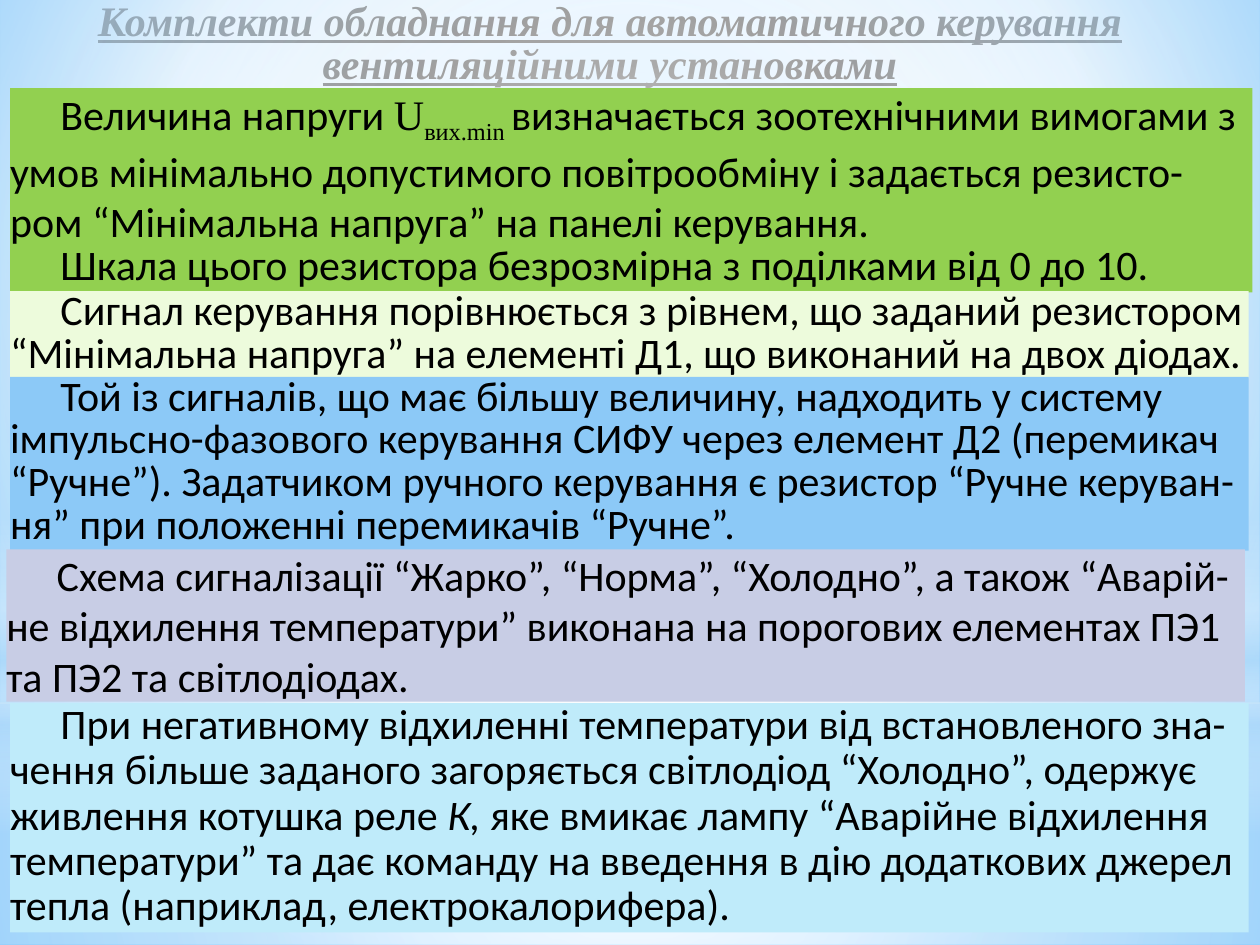
from lxml import etree
from pptx import Presentation, util as u
from pptx.dml.color import RGBColor
from pptx.enum import shapes, text
from pptx.oxml.ns import qn

BLACK = RGBColor(0x00, 0x00, 0x00)
WHITE = RGBColor(0xFF, 0xFF, 0xFF)
SKY = RGBColor(0x9E, 0xD5, 0xFF)
DEEP_SKY = RGBColor(0x5B, 0xB9, 0xFF)
HAZE = RGBColor(0xB4, 0xDC, 0xFA)
GREEN = RGBColor(0x92, 0xD0, 0x50)
PALE_GREEN = RGBColor(0xED, 0xFB, 0xDC)
BLUE = RGBColor(0x8C, 0xC9, 0xF7)
LAVENDER = RGBColor(0xC8, 0xCD, 0xE5)
PALE_CYAN = RGBColor(0xBF, 0xEB, 0xFA)

WIDTH, HEIGHT = 720, 540
HORIZON = 401.76
SERIF = {"name": "Times New Roman"}
CENTRE = (50, 50, 50, 50)


class SlideBuilder:
    font = "Calibri"
    size = 24
    indent = 28.8

    def __init__(self, slide):
        self.slide = slide

    def gradient(self, owner, fill, stops, focus=None):
        """Fill with (position, colour, opacity) stops: circular round focus, else downward."""
        fill.solid()
        solid = next(owner.iter(qn("a:solidFill")))
        grad = etree.Element(qn("a:gradFill"), rotWithShape="1")
        stop_list = etree.SubElement(grad, qn("a:gsLst"))
        for position, colour, opacity in stops:
            stop = etree.SubElement(stop_list, qn("a:gs"), pos=str(position * 1000))
            tint = etree.SubElement(stop, qn("a:srgbClr"), val=str(colour))
            if opacity < 100:
                etree.SubElement(tint, qn("a:alpha"), val=str(opacity * 1000))
        if focus:
            circle = etree.SubElement(grad, qn("a:path"), path="circle")
            edges = {side: str(share * 1000) for side, share in zip("ltrb", focus)}
            etree.SubElement(circle, qn("a:fillToRect"), **edges)
        else:
            etree.SubElement(grad, qn("a:lin"), ang="5400000", scaled="0")
        solid.getparent().replace(solid, grad)

    def background(self, stops, focus):
        fill = self.slide.background.fill
        self.gradient(self.slide.element, fill, stops, focus)

    def shape(self, kind, left, top, width, height):
        shape = self.slide.shapes.add_shape(
            kind, u.Pt(left), u.Pt(top), u.Pt(width), u.Pt(height))
        shape.shadow.inherit = False
        shape.line.fill.background()
        return shape

    def glow(self, kind, top, height, stops, focus=None):
        shape = self.shape(kind, 0, top, WIDTH, height)
        self.gradient(shape._element.spPr, shape.fill, stops, focus)

    def frame(self, shape):
        frame = shape.text_frame
        frame.word_wrap = True
        frame.auto_size = text.MSO_AUTO_SIZE.SHAPE_TO_FIT_TEXT
        frame.vertical_anchor = text.MSO_ANCHOR.TOP
        frame.margin_left = frame.margin_top = frame.margin_right = frame.margin_bottom = 0
        return frame

    def run(self, paragraph, words, baseline=None, **style):
        run = paragraph.add_run()
        run.text = words
        run.font.size = u.Pt(self.size)
        run.font.color.rgb = BLACK
        for key, value in {"name": self.font, **style}.items():
            setattr(run.font, key, value)
        if baseline:
            run.font._element.set("baseline", str(baseline * 1000))

    def title(self, left, top, width, height, words):
        title = self.slide.shapes.title
        title.left, title.top = u.Pt(left), u.Pt(top)
        title.width, title.height = u.Pt(width), u.Pt(height)
        paragraph = self.frame(title).paragraphs[0]
        paragraph.alignment = text.PP_ALIGN.CENTER
        paragraph.line_spacing = 0.85
        paragraph.space_before = u.Pt(0)
        self.run(paragraph, words, bold=True, italic=True, underline=True, **SERIF)

    def panel(self, left, top, width, height, colour, paragraphs):
        """Coloured block; each paragraph is (line spacing, [(words, style), ...])."""
        panel = self.shape(shapes.MSO_SHAPE.RECTANGLE, left, top, width, height)
        panel.fill.solid()
        panel.fill.fore_color.rgb = colour
        frame = self.frame(panel)
        for number, (spacing, runs) in enumerate(paragraphs):
            paragraph = frame.add_paragraph() if number else frame.paragraphs[0]
            paragraph.alignment = text.PP_ALIGN.LEFT
            paragraph.line_spacing = spacing
            properties = paragraph._p.get_or_add_pPr()
            properties.set("marL", "0")
            properties.set("indent", str(u.Pt(self.indent)))
            for words, style in runs:
                self.run(paragraph, words, **style)


def main():
    deck = Presentation()
    deck.slide_width, deck.slide_height = u.Pt(WIDTH), u.Pt(HEIGHT)
    title_only = deck.slide_layouts[5]
    builder = SlideBuilder(deck.slides.add_slide(title_only))

    builder.background([(0, SKY, 100), (60, WHITE, 100), (100, DEEP_SKY, 100)],
                       (20, 10, 20, 60))
    rectangle, oval = shapes.MSO_SHAPE.RECTANGLE, shapes.MSO_SHAPE.OVAL
    builder.glow(rectangle, HORIZON, HEIGHT - HORIZON,
                 [(0, WHITE, 91), (37, WHITE, 76), (100, HAZE, 79)], CENTRE)
    builder.glow(rectangle, 0, HORIZON,
                 [(0, WHITE, 89), (48, WHITE, 62), (100, HAZE, 79)], CENTRE)
    builder.glow(rectangle, 296.64, 180,
                 [(0, WHITE, 0), (29, WHITE, 30), (45, HAZE, 40),
                  (55, WHITE, 26), (65, HAZE, 60), (100, WHITE, 0)])
    builder.glow(oval, 126, HORIZON, [(0, WHITE, 100), (56, WHITE, 0)], CENTRE)

    builder.title(42.48, 1.44, 612, 49.68,
                  "Комплекти обладнання для автоматичного керування "
                  "вентиляційними установками")

    minimum_voltage = [
        (None, [
            ("Величина напруги ", {}),
            ("U", SERIF),
            ("вих.min ", {"baseline": -25, **SERIF}),
            ("визначається зоотехнічними вимогами з умов мінімально допустимого "
             "повітрообміну і задається резисто-ром “Мінімальна напруга” на панелі "
             "керування.", {})]),
        (0.85, [("Шкала цього резистора безрозмірна з поділками від 0 до 10.", {})])]
    comparison = [(0.85, [
        ("Сигнал керування порівнюється з рівнем, що заданий резистором "
         "“Мінімальна напруга” на елементі Д1, що виконаний на двох діодах.", {})])]
    manual_control = [(0.85, [
        ("Той із сигналів, що має більшу величину, надходить у систему "
         "імпульсно-фазового керування СИФУ через елемент Д2 (перемикач “Ручне”). "
         "Задатчиком ручного керування є резистор “Ручне керуван-ня” при положенні "
         "перемикачів “Ручне”.", {})])]
    signalling = [(None, [
        ("Схема сигналізації “Жарко”, “Норма”, “Холодно”, а також “Аварій-не "
         "відхилення температури” виконана на порогових елементах ПЭ1 та ПЭ2 та "
         "світлодіодах.", {})])]
    cold_alarm = [(0.9, [
        ("При негативному відхиленні температури від встановленого зна-чення більше "
         "заданого загоряється світлодіод “Холодно”, одержує живлення котушка реле ", {}),
        ("К,", {"italic": True}),
        (" яке вмикає лампу “Аварійне відхилення температури” та дає команду на "
         "введення в дію додаткових джерел тепла (наприклад, електрокалорифера).", {})])]

    for left, top, width, height, colour, paragraphs in [
            (5.76, 50.4, 709.92, 116.64, GREEN, minimum_voltage),
            (5.76, 166.32, 707.76, 49.68, PALE_GREEN, comparison),
            (5.76, 215.28, 707.76, 99.36, BLUE, manual_control),
            (3.6, 313.92, 707.76, 87.12, LAVENDER, signalling),
            (5.76, HORIZON, 707.76, 131.04, PALE_CYAN, cold_alarm)]:
        builder.panel(left, top, width, height, colour, paragraphs)

    deck.save("out.pptx")


if __name__ == "__main__":
    main()
